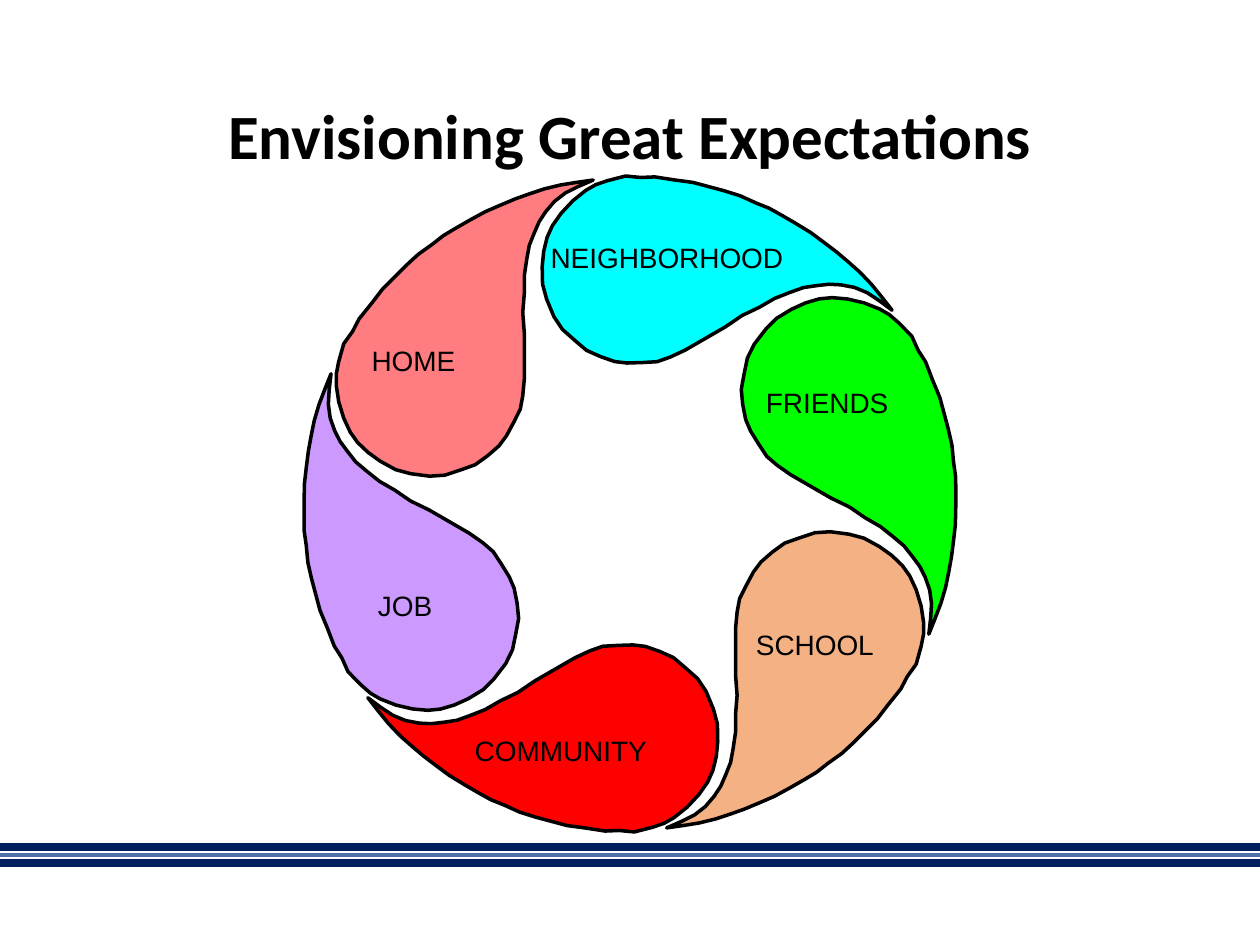
from math import cos, radians, sin

from lxml import etree
from pptx import Presentation
from pptx import util as u
from pptx.dml.color import RGBColor
from pptx.enum import shapes, text
from pptx.oxml.ns import qn

THEME = {
    "ink": "000000", "navy": "001F5F", "steel": "5070A7",
    "title_font": "Calibri", "title_size": 36,
    "label_font": "Arial", "label_size": 16, "outline": 2,
}

TITLE = "Envisioning Great Expectations"
TITLE_BOX = (1.75, 0.97, 21.9, 3.68)

# label, petal fill, label left, top, width (cm); clockwise, 60 degrees apart
PETALS = [
    ("HOME", "FF7C80", 7.24, 6.81, 2.9),
    ("NEIGHBORHOOD", "00FFFF", 10.85, 4.72, 6.63),
    ("FRIENDS", "00FF00", 15.19, 7.65, 3.89),
    ("SCHOOL", "F4B183", 14.99, 12.52, 4.14),
    ("COMMUNITY", "FF0000", 9.32, 14.66, 5.18),
    ("JOB", "CC99FF", 7.37, 11.73, 2.11),
]
LABEL_HEIGHT = 1.07
CENTER = (12.7, 10.16)

# Outline of the first petal, in cm from the centre of the wheel
OUTLINE = [
    (-2.13, -2.51), (-2.13, -3.05), (-2.13, -3.45), (-2.16, -3.86), (-2.13, -4.24),
    (-2.13, -4.6), (-2.08, -4.93), (-2.03, -5.21), (-1.93, -5.46), (-1.83, -5.69),
    (-1.7, -5.89), (-1.52, -6.1), (-1.3, -6.27), (-1.04, -6.4), (-0.74, -6.53),
    (-1.09, -6.48), (-1.4, -6.43), (-1.73, -6.35), (-2.03, -6.25), (-2.31, -6.15),
    (-2.62, -6.02), (-2.92, -5.89), (-3.23, -5.72), (-3.51, -5.56), (-3.76, -5.41),
    (-3.99, -5.23), (-4.27, -5.03), (-4.52, -4.8), (-4.75, -4.57), (-4.98, -4.34),
    (-5.21, -4.04), (-5.46, -3.73), (-5.59, -3.48), (-5.77, -3.23), (-5.87, -2.87),
    (-5.92, -2.62), (-5.92, -2.39), (-5.87, -2.06), (-5.77, -1.73), (-5.64, -1.45),
    (-5.49, -1.24), (-5.28, -1.04), (-5.03, -0.86), (-4.72, -0.69), (-4.42, -0.61),
    (-4.04, -0.56), (-3.73, -0.58), (-3.4, -0.69), (-3.12, -0.79), (-2.87, -0.97),
    (-2.64, -1.17), (-2.49, -1.37), (-2.34, -1.65), (-2.21, -1.91), (-2.16, -2.18),
]

# y (cm), colour, weight (pt)
STRIPES = [(17.07, "navy", 4.5), (17.23, "steel", 2.25), (17.4, "navy", 4.5)]


def rgb(value):
    return RGBColor.from_string(value)


def add_stripe(parent, y, color, weight):
    cx = parent.add_connector(shapes.MSO_CONNECTOR.STRAIGHT,
                              0, u.Cm(y), u.Cm(25.4), u.Cm(y))
    cx.line.color.rgb = rgb(THEME[color])
    cx.line.width = u.Pt(weight)
    etree.SubElement(cx._element.spPr, qn("a:effectLst"))


def add_petal(parent, angle, fill):
    """Draw the outline turned clockwise by angle degrees about the centre."""
    c, s = cos(radians(angle)), sin(radians(angle))
    points = [(u.Cm(CENTER[0] + x * c - y * s), u.Cm(CENTER[1] + x * s + y * c))
              for x, y in OUTLINE]
    fb = parent.build_freeform(*points[0])
    fb.add_line_segments(points[1:], close=True)
    sp = fb.convert_to_shape()
    sp.shadow.inherit = False
    sp.fill.solid()
    sp.fill.fore_color.rgb = rgb(fill)
    sp.line.color.rgb = rgb(THEME["ink"])
    sp.line.width = u.Pt(THEME["outline"])


def add_text(parent, words, box, role, bold=False):
    tf = parent.add_textbox(*map(u.Cm, box)).text_frame
    tf.word_wrap = True
    tf.text = words
    p = tf.paragraphs[0]
    p.font.name = THEME[role + "_font"]
    p.font.size = u.Pt(THEME[role + "_size"])
    p.font.bold = bold
    p.font.color.rgb = rgb(THEME["ink"])
    return tf


def main():
    prs = Presentation()
    prs.slide_width, prs.slide_height = u.Cm(25.4), u.Cm(19.05)
    s = prs.slides.add_slide(prs.slide_layouts[6])

    stripes = s.shapes.add_group_shape().shapes
    for stripe in STRIPES:
        add_stripe(stripes, *stripe)

    tf = add_text(s.shapes, TITLE, TITLE_BOX, "title", bold=True)
    tf.vertical_anchor = text.MSO_ANCHOR.MIDDLE
    tf.paragraphs[0].alignment = text.PP_ALIGN.CENTER
    tf.paragraphs[0].line_spacing = 0.9

    wheel = s.shapes.add_group_shape().shapes
    for i, (_, fill, *_) in enumerate(PETALS):
        add_petal(wheel, i * 360 / len(PETALS), fill)
    for label, _, left, top, width in PETALS:
        add_text(wheel, label, (left, top, width, LABEL_HEIGHT), "label")

    prs.save("out.pptx")


if __name__ == "__main__":
    main()
